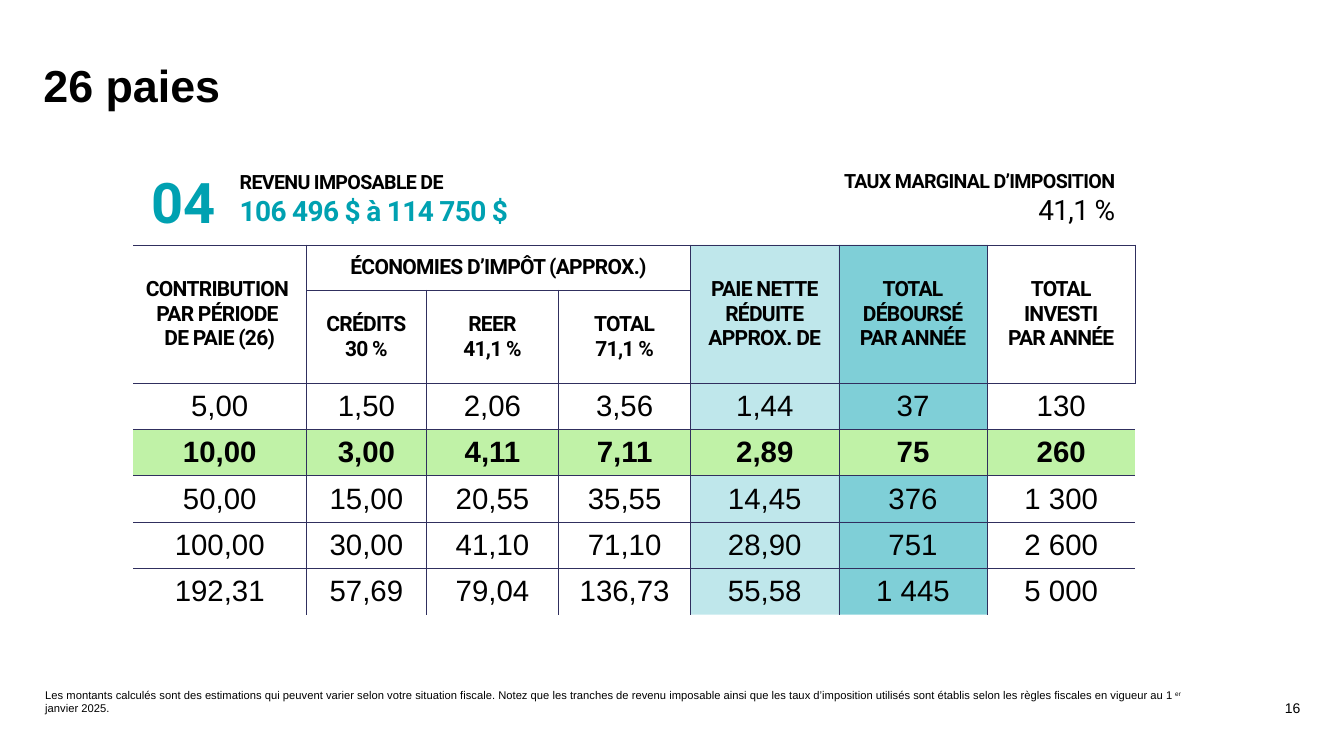
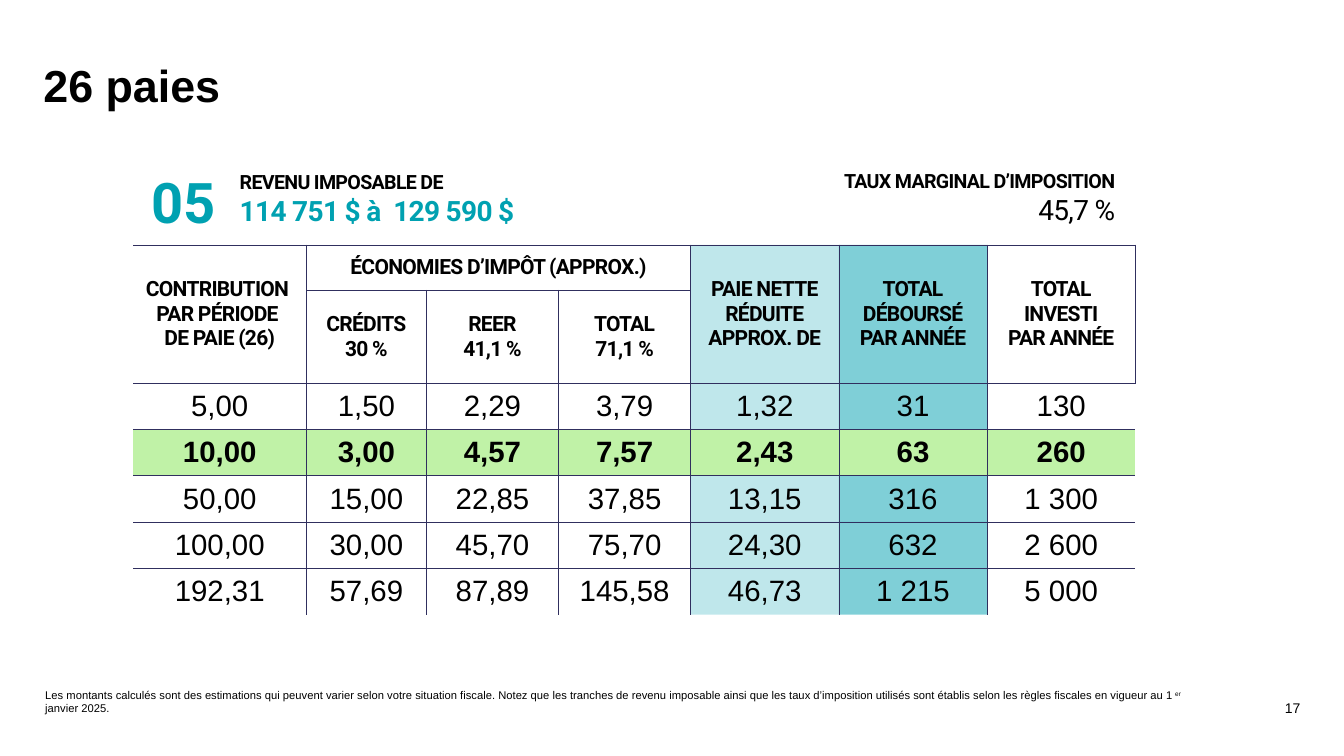
from pptx import Presentation
from pptx import util as u
from pptx.dml import color
from pptx.enum import text
from pptx.oxml import ns
from lxml import etree

COLORS = {"ink": "000000", "teal": "00A1B1", "green": "C0F2A7", "rule": "302F5E"}
HEAD, BODY = "Roboto", "Arial"
LEFT, CENTER, RIGHT = text.PP_ALIGN.LEFT, text.PP_ALIGN.CENTER, text.PP_ALIGN.RIGHT
TOP, MIDDLE = text.MSO_ANCHOR.TOP, text.MSO_ANCHOR.MIDDLE
WIDTH, HEIGHT = u.Inches(13.333), u.Inches(7.5)
NO_STYLE = "{2D5ABB26-0587-4C30-8999-92F81FD0307C}"

COLS = [12.9, 8.93, 9.83, 9.83, 11.03, 11.03, 11.03]
ROWS = [6, 12.27] + [6.13] * 5
MERGES = [(0, 0, 1, 0), (0, 1, 0, 3), (0, 4, 1, 4), (0, 5, 1, 5), (0, 6, 1, 6)]
TINTS = {4: 25, 5: 50}
HIGHLIGHT_ROW = 3
INNER_COLS = (1, 2, 3)
HEADERS = [
    ["CONTRIBUTION \nPAR PÉRIODE \nDE PAIE (26)", "ÉCONOMIES D’IMPÔT (APPROX.)", "", "",
     "PAIE NETTE\nRÉDUITE\nAPPROX. DE", "TOTAL\nDÉBOURSÉ\nPAR ANNÉE",
     "TOTAL\nINVESTI\nPAR ANNÉE"],
    ["", "CRÉDITS\n30 %", "REER\n41,1 %", "TOTAL\n71,1 %", "", "", ""],
]
CONTRIBUTIONS = ["5,00", "10,00", "50,00", "100,00", "192,31"]
CREDITS = ["1,50", "3,00", "15,00", "30,00", "57,69"]
INVESTED = ["130", "260", "1 300", "2 600", "5 000"]
BRACKETS = [
    {"number": "04", "income": "106 496 $ à 114 750 $", "rate": "41,1 %",
     "reer": ["2,06", "4,11", "20,55", "41,10", "79,04"],
     "savings": ["3,56", "7,11", "35,55", "71,10", "136,73"],
     "net": ["1,44", "2,89", "14,45", "28,90", "55,58"],
     "paid": ["37", "75", "376", "751", "1 445"]},
    {"number": "05", "income": "114 751 $ à  129 590 $", "rate": "45,7 %",
     "reer": ["2,29", "4,57", "22,85", "45,70", "87,89"],
     "savings": ["3,79", "7,57", "37,85", "75,70", "145,58"],
     "net": ["1,32", "2,43", "13,15", "24,30", "46,73"],
     "paid": ["31", "63", "316", "632", "1 215"]},
]
NOTE = ("Les montants calculés sont des estimations qui peuvent varier selon votre situation "
        "fiscale. Notez que les tranches de revenu imposable ainsi que les taux d’imposition "
        "utilisés sont établis selon les règles fiscales en vigueur au 1")


def across(share):
    return round(WIDTH * share / 100)


def down(share):
    return round(HEIGHT * share / 100)


def area(x, y, w, h):
    return across(x), down(y), across(w), down(h)


def write(p, content, size=21, font=BODY, ink="ink", bold=False, spacing=0, raised=0,
          align=LEFT, leading=None):
    p.alignment = align
    if leading:
        p.line_spacing = u.Pt(leading)
    for i, line in enumerate(content.split("\n")):
        if i:
            p.add_line_break()
        r = p.add_run()
        r.text = line
        r.font.size, r.font.name, r.font.bold = u.Pt(size), font, bold
        r.font.color.rgb = color.RGBColor.from_string(COLORS[ink])
        if spacing:
            r._r.get_or_add_rPr().set("spc", str(round(spacing * 100)))
        if raised:
            r._r.get_or_add_rPr().set("baseline", str(raised * 1000))


def add_text(s, place, *lines, anchor=TOP):
    tf = s.shapes.add_textbox(*area(*place)).text_frame
    tf.word_wrap, tf.vertical_anchor = True, anchor
    for i, (content, style) in enumerate(lines):
        write(tf.add_paragraph() if i else tf.paragraphs[0], content, **style)
    return tf


def set_title(s, content):
    title = s.shapes.title
    title.left, title.top, title.width, title.height = area(2.48, 6.67, 85.95, 11.73)
    tf = title.text_frame
    tf.vertical_anchor, tf.auto_size = TOP, text.MSO_AUTO_SIZE.NONE
    write(tf.paragraphs[0], content, size=32, bold=True, leading=40)


def fill_cell(cell, name, opacity=100):
    cell.fill.solid()
    cell.fill.fore_color.rgb = color.RGBColor.from_string(COLORS[name])
    if opacity < 100:
        rgb = cell._tc.tcPr.find(".//" + ns.qn("a:srgbClr"))
        etree.SubElement(rgb, ns.qn("a:alpha"), val=str(opacity * 1000))


def rule_cell(cell, sides):
    tcPr = cell._tc.get_or_add_tcPr()
    for i, side in enumerate(sides):
        line = etree.Element(ns.qn("a:ln" + side), w=str(u.Pt(0.6)))
        fill = etree.SubElement(line, ns.qn("a:solidFill"))
        etree.SubElement(fill, ns.qn("a:srgbClr"), val=COLORS["rule"])
        tcPr.insert(i, line)


def owner(row, col):
    for top, left, bottom, right in MERGES:
        if top <= row <= bottom and left <= col <= right:
            return top, left
    return row, col


def ruled_sides(row, col):
    here = owner(row, col)
    sides = ""
    if col > 0 and owner(row, col - 1) != here:
        sides += "L"
    if col < len(COLS) - 1 and owner(row, col + 1) != here:
        sides += "R"
    if row == 0 or owner(row - 1, col) != here:
        sides += "T"
    if row < len(ROWS) - 1 and owner(row + 1, col) != here:
        sides += "B"
    return sides


def format_cell(cell, row, col, content):
    cell.vertical_anchor = MIDDLE
    if row and col in INNER_COLS:
        cell.margin_left = cell.margin_right = cell.margin_top = cell.margin_bottom = 0
    if row == HIGHLIGHT_ROW:
        fill_cell(cell, "green")
    elif col in TINTS:
        fill_cell(cell, "teal", TINTS[col])
    else:
        cell.fill.background()
    rule_cell(cell, ruled_sides(row, col))
    if content:
        style = (dict(size=15, font=HEAD, bold=True, spacing=-0.5) if row < len(HEADERS)
                 else dict(bold=row == HIGHLIGHT_ROW))
        write(cell.text_frame.paragraphs[0], content, align=CENTER, **style)


def add_savings_table(s, bracket):
    rows = HEADERS + list(zip(CONTRIBUTIONS, CREDITS, bracket["reer"], bracket["savings"],
                              bracket["net"], bracket["paid"], INVESTED))
    place = area(9.9, 32.4, sum(COLS), sum(ROWS))
    table = s.shapes.add_table(len(ROWS), len(COLS), *place).table
    table.first_row = table.horz_banding = False
    table._tbl.tblPr.find(ns.qn("a:tableStyleId")).text = NO_STYLE
    for column, share in zip(table.columns, COLS):
        column.width = across(share)
    for line, share in zip(table.rows, ROWS):
        line.height = down(share)
    for top, left, bottom, right in MERGES:
        table.cell(top, left).merge(table.cell(bottom, right))
    for row, values in enumerate(rows):
        for col, content in enumerate(values):
            format_cell(table.cell(row, col), row, col, content)


def add_bracket_heading(s, bracket):
    label = dict(size=14, font=HEAD, bold=True, spacing=-0.5)
    value = dict(label, size=20)
    add_text(s, (17.1, 21.87, 24.53, 8.93), ("REVENU IMPOSABLE DE", label),
             (bracket["income"], dict(value, ink="teal")))
    add_text(s, (56.33, 21.73, 27.38, 8.93),
             ("TAUX MARGINAL D’IMPOSITION", dict(label, align=RIGHT)),
             (bracket["rate"], dict(value, bold=False, align=RIGHT)))
    add_text(s, (10.5, 22.93, 7.28, 11.73),
             (bracket["number"], dict(size=40, font=HEAD, ink="teal", bold=True, leading=40)))


def add_footer(s, page):
    add_text(s, (75, 90.93, 22.5, 5.33), (str(page), dict(size=10, align=RIGHT)),
             anchor=MIDDLE)
    tf = add_text(s, (2.63, 90.4, 87.6, 4.93), (NOTE, dict(size=8)))
    write(tf.paragraphs[0], "er", size=8, raised=30)
    write(tf.paragraphs[0], " janvier 2025.", size=8)


def main():
    prs = Presentation()
    prs.slide_width, prs.slide_height = WIDTH, HEIGHT
    for page, bracket in enumerate(BRACKETS, start=16):
        s = prs.slides.add_slide(prs.slide_layouts.get_by_name("Title Only"))
        set_title(s, "26 paies")
        add_bracket_heading(s, bracket)
        add_savings_table(s, bracket)
        add_footer(s, page)
    prs.save("out.pptx")


if __name__ == "__main__":
    main()
